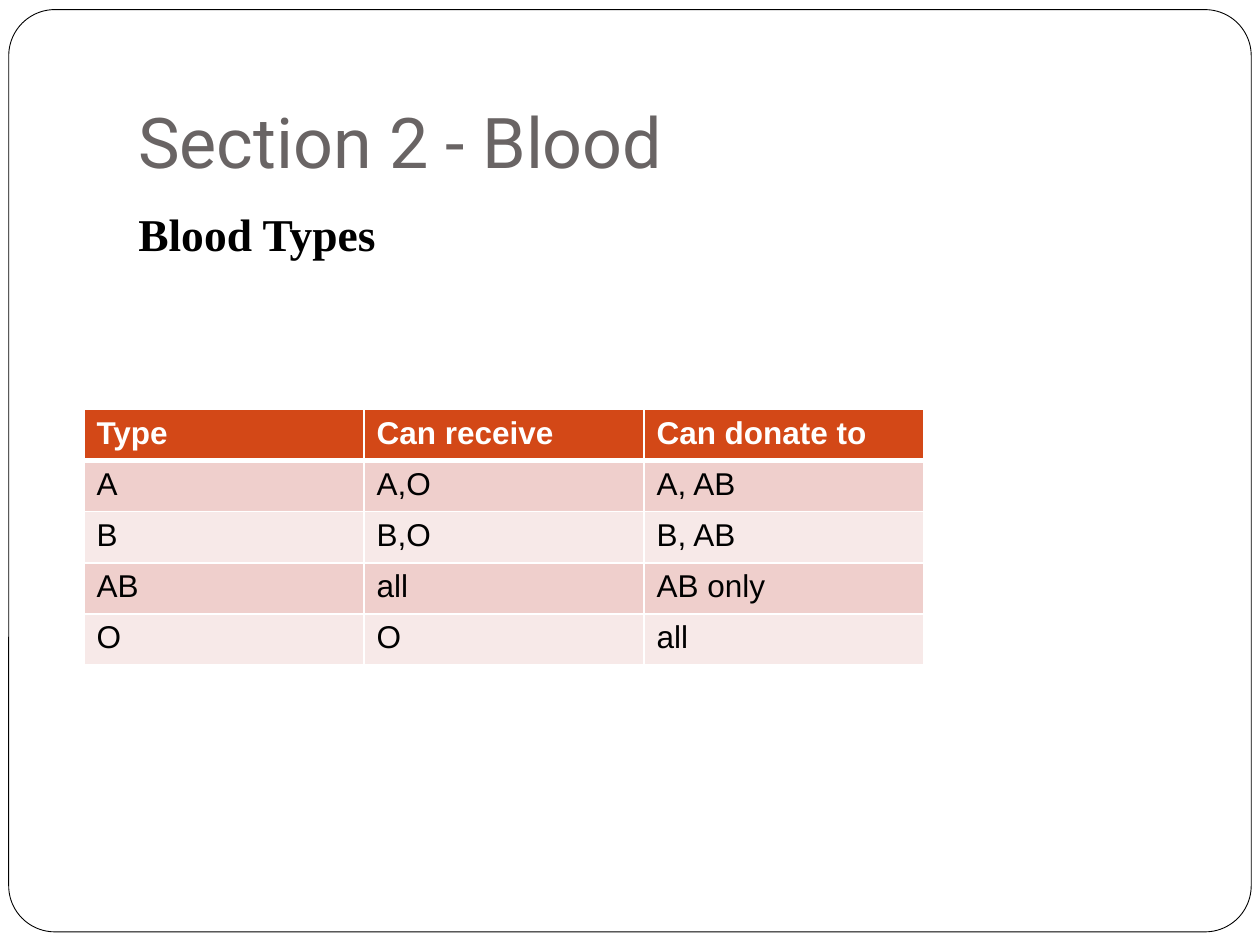
from lxml.etree import SubElement
from pptx import Presentation
from pptx.dml.color import RGBColor
from pptx.enum.shapes import MSO_SHAPE
from pptx.enum.text import MSO_ANCHOR
from pptx.oxml.ns import qn
from pptx.util import Pt

BLOOD_TYPES = [
    ("Type", "Can receive", "Can donate to"),
    ("A", "A,O", "A, AB"),
    ("B", "B,O", "B, AB"),
    ("AB", "all", "AB only"),
    ("O", "O", "all"),
]


def color(hex_value):
    return RGBColor.from_string(hex_value)


class SlideBuilder:
    """Holds the style and the slide being filled."""

    white, black = "FFFFFF", "000000"
    header_fill = "D34817"
    band_fills = ("EFCFCC", "F7E9E8")
    title_format = {"name": "Roboto", "size": Pt(40), "color": "696464"}
    subtitle_format = {"name": "Times New Roman", "size": Pt(26), "bold": True, "color": black}
    header_format = {"name": "Arial", "size": Pt(18), "bold": True, "color": white}
    body_format = {**header_format, "bold": False, "color": black}

    def __init__(self, presentation):
        self.slide = presentation.slides.add_slide(presentation.slide_layouts[6])

    def add_run(self, paragraph, text, text_format):
        run = paragraph.add_run()
        run.text = text
        for name, value in text_format.items():
            if name == "color":
                run.font.color.rgb = color(value)
            else:
                setattr(run.font, name, value)

    def frame(self, left, top, width, height, rounding):
        shape = self.slide.shapes.add_shape(
            MSO_SHAPE.ROUNDED_RECTANGLE, Pt(left), Pt(top), Pt(width), Pt(height))
        shape.adjustments[0] = rounding
        shape.shadow.inherit = False
        shape.fill.solid()
        shape.fill.fore_color.rgb = color(self.white)
        shape.line.color.rgb = color(self.black)
        shape.line.width = Pt(0.5)

    def text(self, left, top, width, height, text, text_format, frame_format, space_before=0):
        box = self.slide.shapes.add_textbox(Pt(left), Pt(top), Pt(width), Pt(height))
        for name, value in {"word_wrap": True, **frame_format}.items():
            setattr(box.text_frame, name, value)
        paragraph = box.text_frame.paragraphs[0]
        paragraph.space_before = Pt(space_before)
        self.add_run(paragraph, text, text_format)

    def cell_borders(self, cell, bottom, top):
        """Draw white borders; must run before the cell is filled."""
        properties = cell._tc.get_or_add_tcPr()
        for side, width in {"L": 1, "R": 1, "T": top, "B": bottom}.items():
            line = SubElement(properties, qn(f"a:ln{side}"), w=str(Pt(width)))
            fill = SubElement(line, qn("a:solidFill"))
            SubElement(fill, qn("a:srgbClr"), val=self.white)

    def table(self, left, top, width, height, rows):
        table = self.slide.shapes.add_table(
            len(rows), len(rows[0]), Pt(left), Pt(top), Pt(width), Pt(height)).table
        for row_index, row in enumerate(rows):
            is_header = row_index == 0
            fill = self.header_fill if is_header else self.band_fills[(row_index - 1) % 2]
            text_format = self.header_format if is_header else self.body_format
            for column_index, text in enumerate(row):
                cell = table.cell(row_index, column_index)
                self.cell_borders(cell, bottom=3 if is_header else 1,
                                  top=3 if row_index == 1 else 1)
                cell.fill.solid()
                cell.fill.fore_color.rgb = color(fill)
                self.add_run(cell.text_frame.paragraphs[0], text, text_format)


def main():
    presentation = Presentation()
    presentation.slide_width, presentation.slide_height = Pt(720), Pt(540)
    builder = SlideBuilder(presentation)
    builder.frame(5, 5.5, 710, 527, rounding=0.05)
    builder.text(72, 21.6, 612, 90, "Section 2 - Blood", builder.title_format,
                 {"vertical_anchor": MSO_ANCHOR.BOTTOM, "margin_bottom": Pt(7.2)})
    builder.text(72, 114, 612, 360, "Blood Types", builder.subtitle_format,
                 {"vertical_anchor": MSO_ANCHOR.TOP}, space_before=5.8)
    builder.table(48, 234, 480, 146, BLOOD_TYPES)
    presentation.save("out.pptx")


if __name__ == "__main__":
    main()
